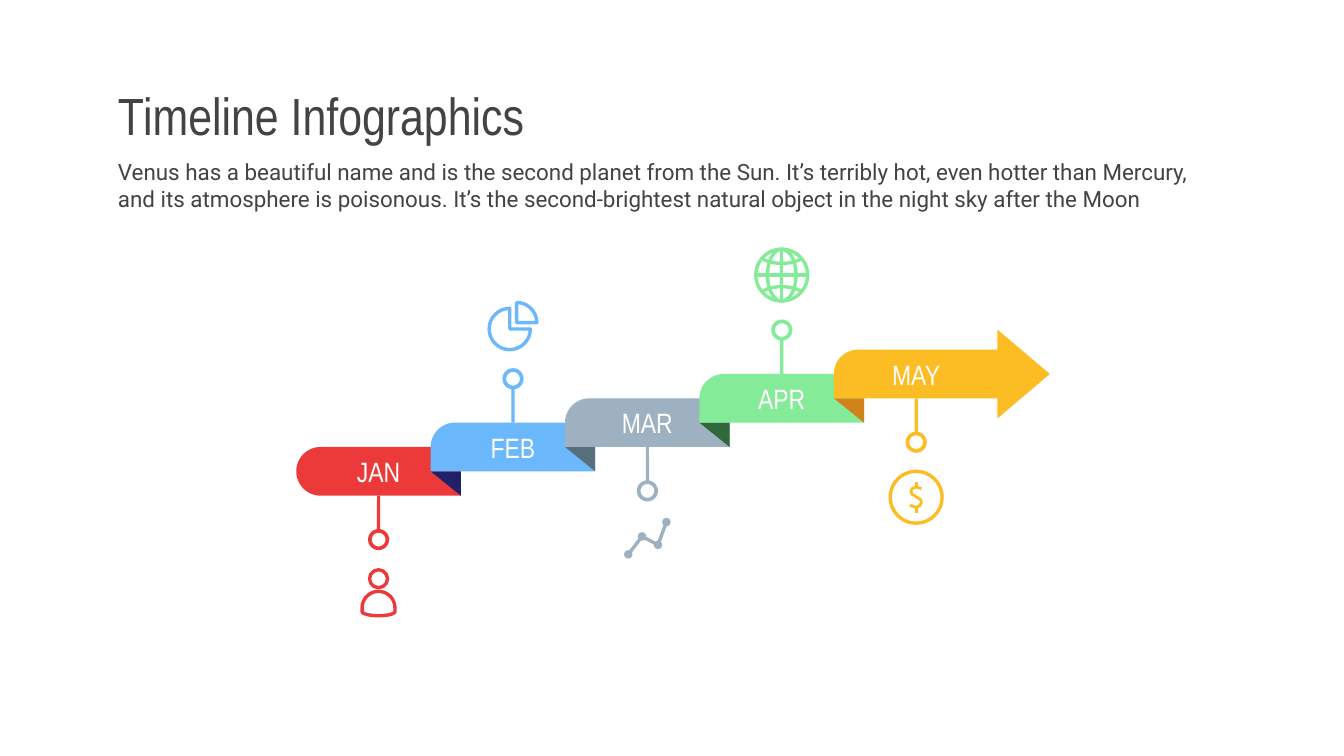
from dataclasses import dataclass
from math import cos, radians, sin
from typing import Callable

from lxml.etree import SubElement
from pptx import Presentation
from pptx.dml.color import RGBColor
from pptx.enum.shapes import MSO_CONNECTOR, MSO_SHAPE
from pptx.enum.text import MSO_ANCHOR, PP_ALIGN
from pptx.oxml.ns import qn
from pptx.util import Cm, Pt

Point = tuple[float, float]


@dataclass(frozen=True)
class Theme:
    ink: str = "434343"
    white: str = "FFFFFF"
    heading_font: str = "Arial Narrow"
    body_font: str = "Roboto"
    title_size: float = 28
    label_size: float = 15
    body_size: float = 12
    stroke: float = 1.8
    fine_stroke: float = 1.5


@dataclass(frozen=True)
class Month:
    name: str
    color: str
    fold_color: str | None
    side: int
    draw_icon: Callable


THEME = Theme()
FIRST_LEFT, FIRST_TOP = 5.6, 8.45
STEP, RISE = 2.54, 0.46
RIBBON_WIDTH, RIBBON_HEIGHT = 3.11, 2 * RISE
FOLD_WIDTH = RIBBON_WIDTH - STEP
PIN_REACH, ICON_GAP = 0.83, 1.04
RING_OUTER, RING_INNER, STEM_HALF, STEM_ANGLE = 0.2, 0.13, 0.03, 9
ARROW_LENGTH, ARROW_SPAN, ARROW_OVERLAP = 0.99, 1.68, 0.02


def paint(shape, fill: str | None, line: str | None, width: float = THEME.stroke) -> None:
    shape.shadow.inherit = False
    if fill:
        shape.fill.solid()
        shape.fill.fore_color.rgb = RGBColor.from_string(fill)
    else:
        shape.fill.background()
    if line:
        shape.line.color.rgb = RGBColor.from_string(line)
        shape.line.width = Pt(width)
    else:
        shape.line.fill.background()


def write(shape, text: str, *, font: str, size: float, color: str, align=PP_ALIGN.LEFT) -> None:
    frame = shape.text_frame
    frame.word_wrap = True
    frame.vertical_anchor = MSO_ANCHOR.MIDDLE
    frame.margin_left = frame.margin_right = Cm(0.25)
    frame.margin_top = frame.margin_bottom = Cm(0.25)
    paragraph = frame.paragraphs[0]
    paragraph.alignment = align
    run = paragraph.add_run()
    run.text = text
    run.font.name = font
    run.font.size = Pt(size)
    run.font.color.rgb = RGBColor.from_string(color)


def arc(center: Point, radii: Point, start: float, end: float, steps: int = 24) -> list[Point]:
    angles = [radians(start + (end - start) * i / steps) for i in range(steps + 1)]
    return [(center[0] + radii[0] * cos(a), center[1] + radii[1] * sin(a)) for a in angles]


def add_outline(slide, *contours: list[Point], fill: str | None = None, line: str | None = None,
                width: float = THEME.stroke, origin: Point = (0, 0), close: bool = True):
    builder = None
    for points in contours:
        lengths = [(Cm(origin[0] + x), Cm(origin[1] + y)) for x, y in points]
        if builder is None:
            builder = slide.shapes.build_freeform(*lengths[0])
        else:
            builder.move_to(*lengths[0])
        builder.add_line_segments(lengths[1:], close=close)
    shape = builder.convert_to_shape()
    paint(shape, fill, line, width)
    return shape


def add_oval(slide, center: Point, radii: Point, *, fill: str | None = None,
             line: str | None = None) -> None:
    (x, y), (rx, ry) = center, radii
    shape = slide.shapes.add_shape(MSO_SHAPE.OVAL, Cm(x - rx), Cm(y - ry), Cm(2 * rx), Cm(2 * ry))
    paint(shape, fill, line)


def add_line(slide, start: Point, end: Point, color: str, width: float = THEME.stroke) -> None:
    connector = slide.shapes.add_connector(
        MSO_CONNECTOR.STRAIGHT, Cm(start[0]), Cm(start[1]), Cm(end[0]), Cm(end[1]))
    connector.line.color.rgb = RGBColor.from_string(color)
    connector.line.width = Pt(width)
    SubElement(connector._element.spPr, qn("a:effectLst"))


def draw_person(slide, x: float, y: float, color: str) -> None:
    add_oval(slide, (x, y - 0.3), (0.17, 0.17), line=color)
    body = arc((0, 0.25), (0.31, 0.31), 180, 360) + arc((0, 0.32), (0.31, 0.08), 0, 180)
    add_outline(slide, body, line=color, origin=(x, y))


def draw_pie(slide, x: float, y: float, color: str) -> None:
    for corner, radius, start, end in (((-0.06, 0.1), 0.39, 0, 270), ((0.07, -0.02), 0.38, 270, 360)):
        sector = [corner] + arc(corner, (radius, radius), start, end)
        add_outline(slide, sector, line=color, origin=(x, y))


def draw_trend(slide, x: float, y: float, color: str) -> None:
    points = [(-0.36, 0.16), (-0.1, -0.18), (0.2, -0.02), (0.36, -0.45)]
    add_outline(slide, points, line=color, origin=(x, y), close=False)
    for dx, dy in points:
        add_oval(slide, (x + dx, y + dy), (0.08, 0.08), fill=color)


def draw_globe(slide, x: float, y: float, color: str) -> None:
    radius = 0.49
    for half_width in (radius, 0.27):
        add_oval(slide, (x, y), (half_width, radius), line=color)
    add_line(slide, (x - radius, y), (x + radius, y), color)
    add_line(slide, (x, y - radius), (x, y + radius), color)
    for side in (-1, 1):
        latitude = arc((0, side * 0.4), (0.42, -side * 0.18), 30, 150)
        add_outline(slide, latitude, line=color, origin=(x, y), close=False)


def draw_coin(slide, x: float, y: float, color: str) -> None:
    add_oval(slide, (x, y), (0.49, 0.49), line=color)
    curve = [(0.1, -0.16), (0.01, -0.19), (-0.07, -0.17), (-0.1, -0.11), (-0.07, -0.05), (0, -0.01),
             (0.08, 0.04), (0.1, 0.1), (0.07, 0.16), (-0.01, 0.19), (-0.12, 0.15)]
    bars = [[(0, side * 0.19), (0, side * 0.29)] for side in (-1, 1)]
    add_outline(slide, curve, *bars, line=color, width=THEME.fine_stroke, origin=(x, y), close=False)


MONTHS = [
    Month("JAN", "EC3A3B", None, 1, draw_person),
    Month("FEB", "6BB8FC", "212168", -1, draw_pie),
    Month("MAR", "9DB1C1", "576F7A", 1, draw_trend),
    Month("APR", "84EB98", "2F683A", -1, draw_globe),
    Month("MAY", "FCBD24", "D18119", 1, draw_coin),
]


def draw_pin(slide, x: float, y: float, side: int, color: str) -> None:
    stem = -90 * side
    body = arc((0, 0), (RING_OUTER, RING_OUTER), stem + STEM_ANGLE, stem + 360 - STEM_ANGLE)
    body += [(-side * STEM_HALF, -side * PIN_REACH), (side * STEM_HALF, -side * PIN_REACH)]
    hole = arc((0, 0), (RING_INNER, RING_INNER), 360, 0)
    add_outline(slide, body, hole, fill=color, origin=(x, y))


def draw_month(slide, month: Month, left: float, top: float) -> None:
    bottom, middle = top + RIBBON_HEIGHT, left + RIBBON_WIDTH / 2
    if month.fold_color:
        fold = [(0, 0), (FOLD_WIDTH, RISE), (FOLD_WIDTH, 0)]
        add_outline(slide, fold, fill=month.fold_color, origin=(left, bottom))
    corner_end = [(0, RIBBON_HEIGHT)] if month.fold_color else []
    start = 180 if month.fold_color else 90
    ribbon = corner_end + arc((RISE, RISE), (RISE, RISE), start, 270)
    ribbon += [(RIBBON_WIDTH, 0), (RIBBON_WIDTH, RIBBON_HEIGHT)]
    shape = add_outline(slide, ribbon, fill=month.color, origin=(left, top))
    write(shape, month.name, font=THEME.heading_font, size=THEME.label_size,
          color=THEME.white, align=PP_ALIGN.CENTER)
    edge = bottom if month.side > 0 else top
    ring = edge + month.side * PIN_REACH
    draw_pin(slide, middle, ring, month.side, month.color)
    month.draw_icon(slide, middle, ring + month.side * ICON_GAP, month.color)


def draw_arrowhead(slide, left: float, middle: float, color: str) -> None:
    shape = slide.shapes.add_shape(
        MSO_SHAPE.ISOSCELES_TRIANGLE, Cm(left + (ARROW_LENGTH - ARROW_SPAN) / 2),
        Cm(middle - ARROW_LENGTH / 2), Cm(ARROW_SPAN), Cm(ARROW_LENGTH))
    shape.rotation = 90
    paint(shape, color, None)


def main() -> None:
    presentation = Presentation()
    presentation.slide_width, presentation.slide_height = Cm(25.4), Cm(14.29)
    slide = presentation.slides.add_slide(presentation.slide_layouts[6])
    texts = [
        (1.5, "Timeline Infographics", THEME.heading_font, THEME.title_size),
        (2.82, "Venus has a beautiful name and is the second planet from the Sun. It’s terribly hot, "
               "even hotter than Mercury, and its atmosphere is poisonous. It’s the second-brightest "
               "natural object in the night sky after the Moon", THEME.body_font, THEME.body_size),
    ]
    for top, text, font, size in texts:
        box = slide.shapes.add_textbox(Cm(1.98), Cm(top), Cm(21.46), Cm(1.35))
        write(box, text, font=font, size=size, color=THEME.ink)
    for index, month in enumerate(MONTHS):
        draw_month(slide, month, FIRST_LEFT + index * STEP, FIRST_TOP - index * RISE)
    last = len(MONTHS) - 1
    draw_arrowhead(slide, FIRST_LEFT + last * STEP + RIBBON_WIDTH - ARROW_OVERLAP,
                   FIRST_TOP - last * RISE + RISE, MONTHS[last].color)
    presentation.save("out.pptx")


if __name__ == "__main__":
    main()
